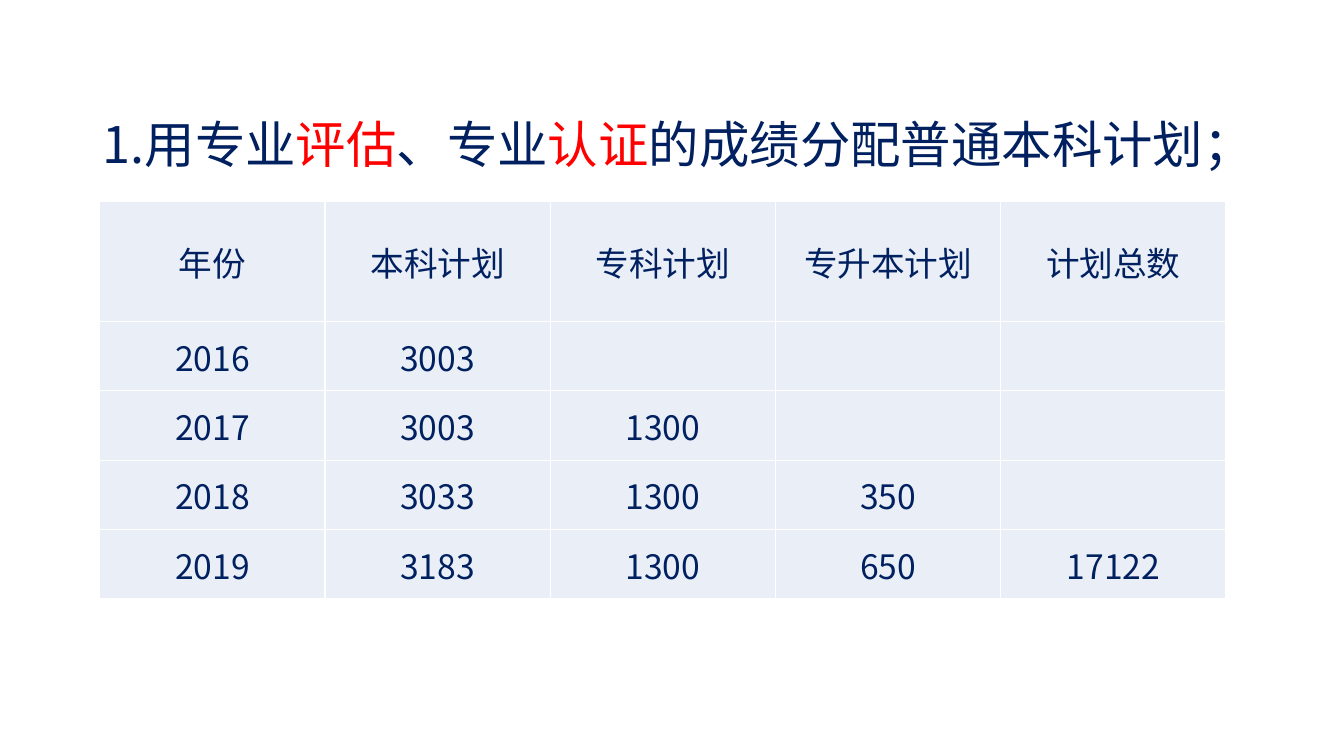
from lxml.etree import SubElement
from pptx import Presentation
from pptx.dml.color import RGBColor
from pptx.enum.text import MSO_ANCHOR, PP_ALIGN
from pptx.oxml.ns import qn
from pptx.util import Inches, Pt

FONT = "Noto Sans CJK SC"
COLORS = {"navy": "002060", "red": "FF0000", "cell": "EAEFF7", "border": "FFFFFF"}
TITLE = [
    ("1.用专业", "navy"),
    ("评估", "red"),
    ("、专业", "navy"),
    ("认证", "red"),
    ("的成绩分配普通本科计划；", "navy"),
]
PLAN_ROWS = [
    ["年份", "本科计划", "专科计划", "专升本计划", "计划总数"],
    ["2016", "3003", "", "", ""],
    ["2017", "3003", "1300", "", ""],
    ["2018", "3033", "1300", "350", ""],
    ["2019", "3183", "1300", "650", "17122"],
]
HEADER_HEIGHT = 1.19


def add_run(p, text, size, color):
    r = p.add_run()
    r.text = text
    r.font.size = Pt(size)
    r.font.name = FONT
    r.font.color.rgb = RGBColor.from_string(COLORS[color])
    rPr = r._r.get_or_add_rPr()
    rPr.set("lang", "zh-CN")
    SubElement(rPr, qn("a:ea"), typeface=FONT)


def set_borders(cell, color, width):
    tcPr = cell._tc.get_or_add_tcPr()
    for side in ("L", "R", "T", "B"):
        ln = SubElement(tcPr, qn(f"a:ln{side}"), w=str(Pt(width)))
        fill = SubElement(ln, qn("a:solidFill"))
        SubElement(fill, qn("a:srgbClr"), val=COLORS[color])


def add_title(slide, left, top, width, height):
    box = slide.shapes.add_textbox(Inches(left), Inches(top), Inches(width), Inches(height))
    tf = box.text_frame
    tf.word_wrap = True
    tf.vertical_anchor = MSO_ANCHOR.MIDDLE
    p = tf.paragraphs[0]
    p.line_spacing = 2.0
    for text, color in TITLE:
        add_run(p, text, 36, color)


def fill_cell(cell, text):
    set_borders(cell, "border", 1)
    cell.fill.solid()
    cell.fill.fore_color.rgb = RGBColor.from_string(COLORS["cell"])
    cell.vertical_anchor = MSO_ANCHOR.MIDDLE
    cell.margin_left = cell.margin_right = cell.margin_top = Inches(0.01)
    cell.margin_bottom = 0
    p = cell.text_frame.paragraphs[0]
    p.alignment = PP_ALIGN.CENTER
    if text:
        add_run(p, text, 24, "navy")


def add_plan_table(slide, left, top, width, height):
    """Equal columns; the header row is taller and the others share the rest."""
    n_rows, n_cols = len(PLAN_ROWS), len(PLAN_ROWS[0])
    table = slide.shapes.add_table(
        n_rows, n_cols, Inches(left), Inches(top), Inches(width), Inches(height)
    ).table
    for column in table.columns:
        column.width = Inches(width / n_cols)
    for i, (row, texts) in enumerate(zip(table.rows, PLAN_ROWS)):
        row.height = Inches((height - HEADER_HEIGHT) / (n_rows - 1) if i else HEADER_HEIGHT)
        for cell, text in zip(row.cells, texts):
            fill_cell(cell, text)


def main():
    prs = Presentation()
    prs.slide_width, prs.slide_height = Inches(13.33), Inches(7.5)
    slide = prs.slides.add_slide(prs.slide_layouts[6])
    add_title(slide, 0.92, 0.4, 11.5, 1.45)
    add_plan_table(slide, 0.99, 2, 11.17, 3.94)
    prs.save("out.pptx")


if __name__ == "__main__":
    main()
